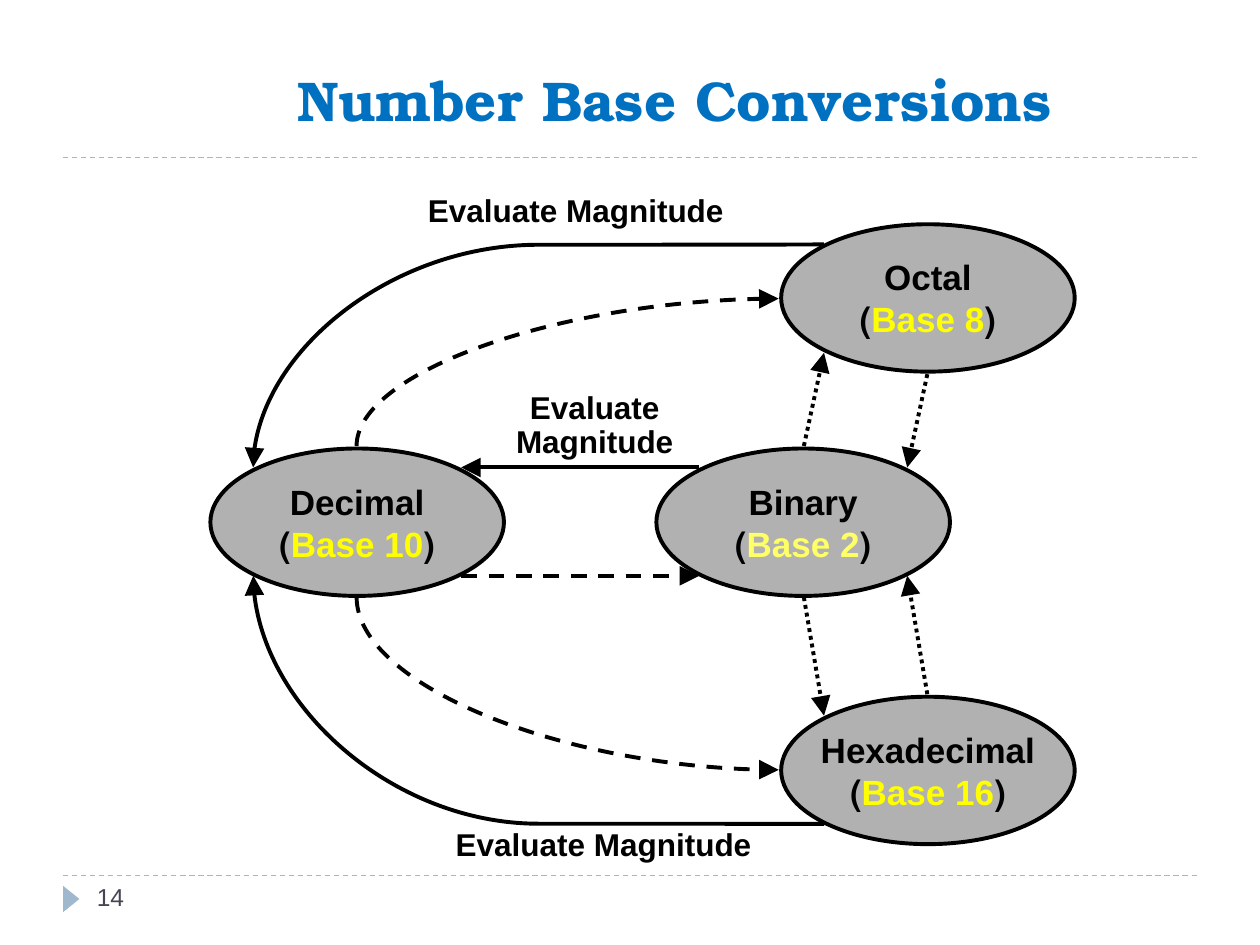
from lxml.etree import SubElement
from pptx import Presentation
from pptx.dml.color import RGBColor
from pptx.enum.dml import MSO_LINE
from pptx.enum.shapes import MSO_CONNECTOR, MSO_SHAPE
from pptx.enum.text import MSO_ANCHOR, PP_ALIGN
from pptx.oxml.ns import qn
from pptx.util import Inches, Pt

COLORS = {
    "title": "0070C0", "rule": "9FB8CD", "node": "B1B1B1", "ink": "000000",
    "base": "FFFF00", "binary_base": "FFFF66", "number": "464653",
}
NODE_W, NODE_H = 2.33, 1.17


def color(name):
    return RGBColor.from_string(COLORS[name])


def add_run(paragraph, text, size, ink, bold=True, font="Arial"):
    run = paragraph.add_run()
    run.text = text
    run.font.name, run.font.size, run.font.bold = font, Pt(size), bold
    run.font.color.rgb = color(ink)


def center_right_to_left(paragraph):
    paragraph.alignment = PP_ALIGN.CENTER
    paragraph._p.get_or_add_pPr().set("rtl", "1")


def add_line(slide, start, end, dash=None, ink="ink", width=2.25,
             arrow=True, kind=MSO_CONNECTOR.STRAIGHT):
    line = slide.shapes.add_connector(
        kind, *[Inches(value) for value in (*start, *end)])
    line.line.color.rgb = color(ink)
    line.line.width = Pt(width)
    if dash:
        line.line.dash_style = dash
    if arrow:
        SubElement(line.line._get_or_add_ln(), qn("a:tailEnd"),
                   type="triangle", w="lg", len="lg")
    SubElement(line._element.spPr, qn("a:effectLst"))
    return line


def add_curve(slide, start, end, dash=None, bend=None):
    """Curve that meets its start or end vertically, by a quarter turn."""
    (x1, y1), (x2, y2) = start, end
    mid_x, mid_y = (x1 + x2) / 2, (y1 + y2) / 2
    half_w, half_h = (x2 - x1) / 2, (y2 - y1) / 2
    curve = add_line(slide, (mid_x + half_h, mid_y - half_w),
                     (mid_x - half_h, mid_y + half_w), dash,
                     kind=MSO_CONNECTOR.CURVE)
    properties = curve._element.spPr
    properties.find(qn("a:xfrm")).set("rot", str(270 * 60000))
    geometry = properties.find(qn("a:prstGeom"))
    if bend is None:
        geometry.set("prst", "curvedConnector2")
    else:
        guides = geometry.find(qn("a:avLst"))
        if guides is None:
            guides = SubElement(geometry, qn("a:avLst"))
        SubElement(guides, qn("a:gd"), name="adj1", fmla=f"val {bend}")


def add_title(slide, left, top, width, height):
    title = slide.shapes.title
    title.left, title.top = Inches(left), Inches(top)
    title.width, title.height = Inches(width), Inches(height)
    frame = title.text_frame
    frame.vertical_anchor = MSO_ANCHOR.BOTTOM
    frame.paragraphs[0].alignment = PP_ALIGN.CENTER
    add_run(frame.paragraphs[0], "Number Base Conversions", 32, "title",
            font="TeX Gyre Bonum")


def add_frame(slide, left, top, width, height):
    """Dashed rules above and below the content, with the page marker."""
    bottom = top + height
    for y in (bottom, top):
        add_line(slide, (left, y), (left + width, y), MSO_LINE.DASH, "rule",
                 0.75, arrow=False)
    marker = slide.shapes.add_shape(
        MSO_SHAPE.ISOSCELES_TRIANGLE, Inches(left - 0.04),
        Inches(bottom + 0.12), Inches(0.21), Inches(0.13))
    marker.rotation = 90
    marker.shadow.inherit = False
    marker.fill.solid()
    marker.fill.fore_color.rgb = color("rule")
    marker.line.fill.background()
    number = slide.shapes.add_textbox(Inches(left + 0.17), Inches(bottom),
                                      Inches(2.17), Inches(0.4))
    number.text_frame.word_wrap = True
    add_run(number.text_frame.paragraphs[0], "14", 14, "number", bold=False)


def add_node(slide, left, top, name, base, base_ink="base"):
    node = slide.shapes.add_shape(MSO_SHAPE.OVAL, Inches(left), Inches(top),
                                  Inches(NODE_W), Inches(NODE_H))
    node.shadow.inherit = False
    node.fill.solid()
    node.fill.fore_color.rgb = color("node")
    node.line.color.rgb = color("ink")
    node.line.width = Pt(2.25)
    frame = node.text_frame
    frame.word_wrap = False
    frame.vertical_anchor = MSO_ANCHOR.MIDDLE
    heading, detail = frame.paragraphs[0], frame.add_paragraph()
    for paragraph in (heading, detail):
        center_right_to_left(paragraph)
    add_run(heading, name, 20, "ink")
    for text, ink in (("(", "ink"), (base, base_ink), (")", "ink")):
        add_run(detail, text, 20, ink)


def add_label(slide, left, top, width, height):
    label = slide.shapes.add_textbox(Inches(left), Inches(top),
                                     Inches(width), Inches(height))
    frame = label.text_frame
    frame.word_wrap = True
    frame.margin_left = frame.margin_right = 0
    frame.margin_top = frame.margin_bottom = 0
    paragraph = frame.paragraphs[0]
    center_right_to_left(paragraph)
    paragraph.line_spacing = 0.9
    add_run(paragraph, "Evaluate Magnitude", 18, "ink")


def add_diagram(slide, left, top):
    def at(x, y):
        return left + x, top + y

    # Number bases
    add_node(slide, *at(0, 1.78), "Decimal", "Base 10")
    add_node(slide, *at(4.53, 0), "Octal", "Base 8")
    add_node(slide, *at(3.54, 1.78), "Binary", "Base 2", "binary_base")
    add_node(slide, *at(4.53, 3.75), "Hexadecimal", "Base 16")

    # Straight conversions
    dash, dots = MSO_LINE.DASH, MSO_LINE.ROUND_DOT
    for start, end, style in (
            ((1.99, 2.79), (3.88, 2.79), dash),
            ((3.88, 1.93), (1.99, 1.93), None),
            ((4.71, 1.76), (4.87, 1.02), dots),
            ((5.69, 1.19), (5.53, 1.93), dots),
            ((5.69, 3.73), (5.53, 2.79), dots),
            ((4.71, 2.96), (4.87, 3.9), dots)):
        add_line(slide, at(*start), at(*end), style)

    # Curved conversions between decimal and the outer bases
    add_curve(slide, at(4.87, 0.16), at(0.34, 1.93), bend=200)
    add_curve(slide, at(1.16, 1.76), at(4.51, 0.59), dash)
    add_curve(slide, at(1.16, 2.96), at(4.51, 4.33), dash)
    add_curve(slide, at(4.87, 4.76), at(0.34, 2.79), bend=100)

    # Labels of the solid arrows
    add_label(slide, *at(1.52, -0.23), 2.76, 0.27)
    add_label(slide, *at(2.36, 1.33), 1.38, 0.54)
    add_label(slide, *at(1.91, 4.8), 2.42, 0.27)


def main():
    deck = Presentation()
    deck.slide_width, deck.slide_height = Inches(10), Inches(7.5)
    slide = deck.slides.add_slide(deck.slide_layouts[5])
    add_frame(slide, 0.5, 1.25, 9, 5.7)
    add_title(slide, 2.01, 0.29, 6.7, 0.81)
    add_diagram(slide, 1.67, 1.78)
    deck.save("out.pptx")


if __name__ == "__main__":
    main()
